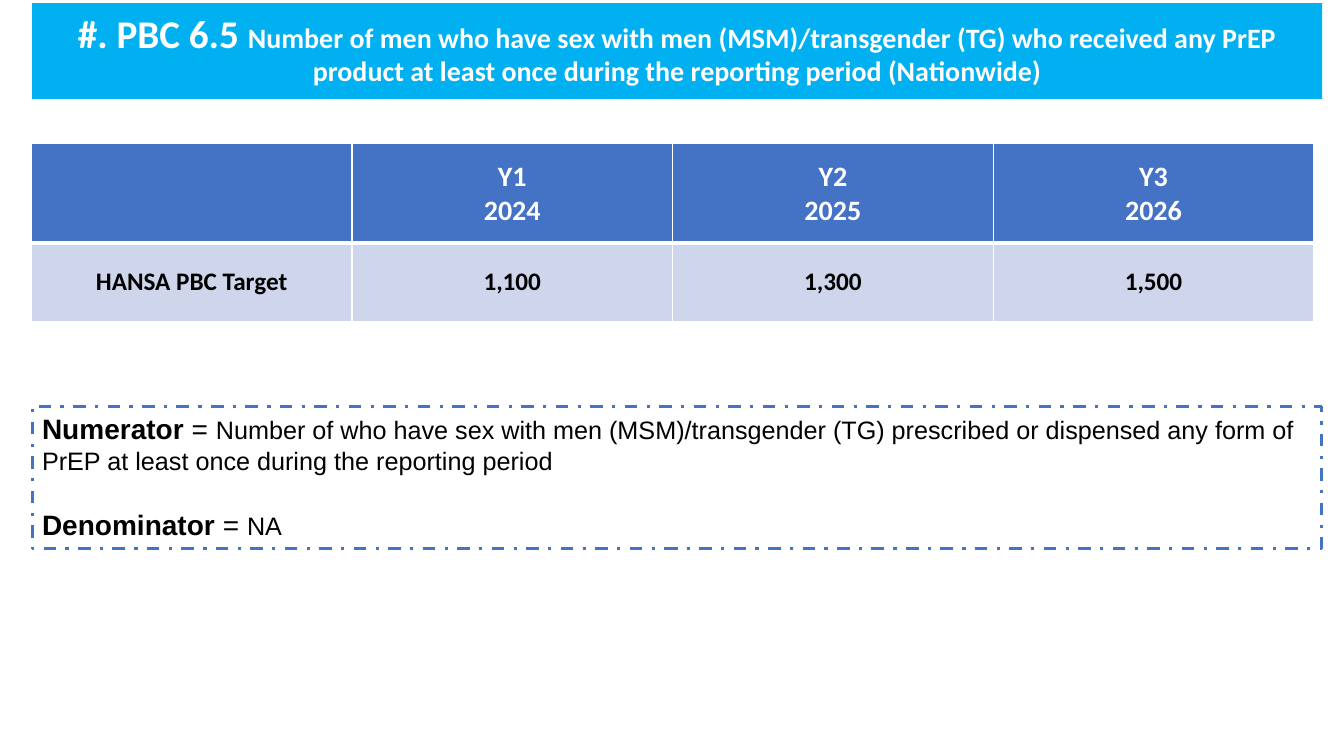
from dataclasses import dataclass

from lxml import etree
from pptx import Presentation
from pptx import util as u
from pptx.dml.color import RGBColor
from pptx.enum import dml, shapes, text
from pptx.oxml.ns import qn


@dataclass(frozen=True)
class Theme:
    banner: str = "00B0F0"
    accent: str = "4472C4"
    band: str = "CFD5EA"
    white: str = "FFFFFF"
    black: str = "000000"
    heading_font: str = "Calibri"
    body_font: str = "Arial"
    code_size: int = 28
    large: int = 20
    normal: int = 18


T = Theme()
MIDDLE = text.MSO_ANCHOR.MIDDLE
CENTER = text.PP_ALIGN.CENTER

TARGETS = [("Y1", "2024", "1,100"), ("Y2", "2025", "1,300"), ("Y3", "2026", "1,500")]
DEFINITIONS = [
    ("Numerator", "Number of who have sex with men (MSM)/transgender (TG) prescribed or "
                  "dispensed any form of PrEP at least once during the reporting period"),
    ("Denominator", "NA"),
]


def paint(fill, color):
    fill.solid()
    fill.fore_color.rgb = RGBColor.from_string(color)


def add_run(p, words, size, font, color, bold=False):
    r = p.add_run()
    r.text = words
    r.font.size = u.Pt(size)
    r.font.name = font
    r.font.bold = bold
    r.font.color.rgb = RGBColor.from_string(color)


def add_title(s, code, indicator):
    sp = s.shapes.title
    sp.left, sp.top, sp.width, sp.height = u.Cm(0.81), u.Cm(0.08), u.Cm(32.51), u.Cm(2.41)
    paint(sp.fill, T.banner)
    tf = sp.text_frame
    tf.word_wrap = True
    tf.auto_size = text.MSO_AUTO_SIZE.NONE
    tf.vertical_anchor = MIDDLE
    p = tf.paragraphs[0]
    p.alignment = CENTER
    p.line_spacing = 0.9
    add_run(p, code, T.code_size, T.heading_font, T.white, True)
    add_run(p, indicator, T.large, T.heading_font, T.white, True)


def set_border(cell, side, width):
    ln = etree.Element(qn(f"a:ln{side}"), w=str(u.Pt(width)))
    fill = etree.SubElement(ln, qn("a:solidFill"))
    etree.SubElement(fill, qn("a:srgbClr"), val=T.white)
    return ln


def format_cell(cell, lines, size, color, fill, widths):
    paint(cell.fill, fill)
    cell.vertical_anchor = MIDDLE
    p = cell.text_frame.paragraphs[0]
    p.alignment = CENTER
    for i, line in enumerate(lines):
        if i:
            p.add_line_break()
        add_run(p, line, size, T.heading_font, color, True)
    # Borders come before the fill in the cell properties
    props = cell._tc.get_or_add_tcPr()
    for i, (side, width) in enumerate(zip("LRTB", widths)):
        props.insert(i, set_border(cell, side, width))


def add_target_table(s, targets):
    columns = len(targets) + 1
    frame = s.shapes.add_table(2, columns, u.Cm(0.79), u.Cm(3.61),
                               u.Cm(8.08 * columns), u.Cm(4.49))
    table = frame.table
    table.rows[0].height, table.rows[1].height = u.Cm(2.51), u.Cm(1.98)
    headers = [()] + [(label, year) for label, year, _ in targets]
    values = ["HANSA PBC Target"] + [value for *_, value in targets]
    for c, (header, value) in enumerate(zip(headers, values)):
        table.columns[c].width = u.Cm(8.08)
        top = table.cell(0, c)
        top.margin_left = top.margin_right = top.margin_top = u.Cm(0.03)
        top.margin_bottom = 0
        format_cell(top, header, T.large, T.white, T.accent, (1, 1, 1, 3))
        format_cell(table.cell(1, c), [value], T.normal, T.black, T.band, (1, 1, 3, 1))


def add_definition_box(s, definitions):
    sp = s.shapes.add_shape(shapes.MSO_SHAPE.RECTANGLE, u.Cm(0.81), u.Cm(10.24),
                            u.Cm(32.49), u.Cm(3.58))
    sp.shadow.inherit = False
    sp.fill.background()
    sp.line.color.rgb = RGBColor.from_string(T.accent)
    sp.line.width = u.Pt(2.25)
    sp.line.dash_style = dml.MSO_LINE.DASH_DOT
    tf = sp.text_frame
    tf.word_wrap = True
    tf.vertical_anchor = text.MSO_ANCHOR.TOP
    for i, (term, meaning) in enumerate(definitions):
        p = tf.add_paragraph() if i else tf.paragraphs[0]
        p.alignment = text.PP_ALIGN.LEFT
        p.space_before = u.Pt(23 if i else 0)
        add_run(p, term, T.large, T.body_font, T.black, True)
        add_run(p, " = ", T.large, T.body_font, T.black)
        add_run(p, meaning, T.normal, T.body_font, T.black)


def main():
    prs = Presentation()
    prs.slide_width, prs.slide_height = u.Cm(33.87), u.Cm(19.05)
    s = prs.slides.add_slide(prs.slide_layouts[5])
    # Indicator banner
    add_title(s, "#. PBC 6.5 ",
              "Number of men who have sex with men (MSM)/transgender (TG) who received any "
              "PrEP product at least once during the reporting period (Nationwide)")
    # Definitions of the indicator
    add_definition_box(s, DEFINITIONS)
    # Yearly targets
    add_target_table(s, TARGETS)
    prs.save("out.pptx")


if __name__ == "__main__":
    main()
